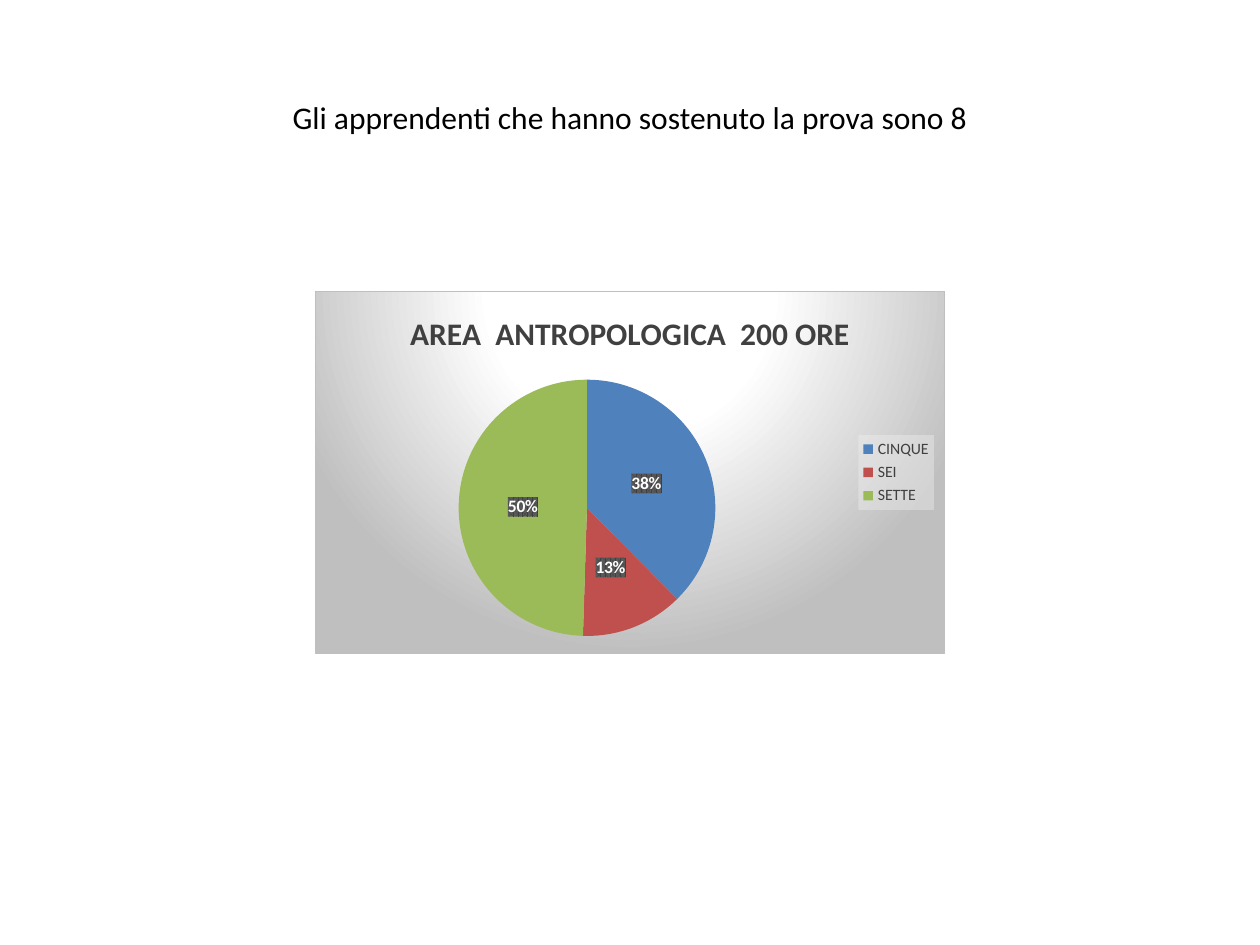
"""Build a slide that shows the marks of the learners as a pie chart."""
import dataclasses
import typing

import lxml.etree
import pptx
import pptx.chart.data
import pptx.dml.color
import pptx.enum.chart
import pptx.enum.text
import pptx.oxml.ns
import pptx.util

EMU_PER_PX = 914400 / 126
DRAWING_NS = pptx.oxml.ns.nsdecls("a", "c")


@dataclasses.dataclass(frozen=True)
class Theme:
    font: str = "Calibri"
    ink: str = "000000"
    muted: str = "404040"
    pale: str = "FFFFFF"
    edge: str = "BFBFBF"
    legend_back: str = "F2F2F2"
    label_back: str = "595959"
    heading_size: int = 18
    label_size: int = 10
    legend_size: int = 9


@dataclasses.dataclass(frozen=True)
class Box:
    left: int
    top: int
    width: int
    height: int

    def emu(self) -> list[int]:
        return [px(length) for length in dataclasses.astuple(self)]


@dataclasses.dataclass(frozen=True)
class Mark:
    name: str
    percent: int
    color: str


THEME = Theme()
HEADING = "Gli apprendenti che hanno sostenuto la prova sono 8"
HEADING_BOX = Box(63, 38, 1134, 157)
AREA_TITLE = "AREA  ANTROPOLOGICA  200 ORE"
AREA_BOX = Box(315, 291, 630, 363)
MARKS = [
    Mark("CINQUE", 38, "4F81BD"),
    Mark("SEI", 13, "C0504D"),
    Mark("SETTE", 50, "9BBB59"),
]
AREA_FILL = f"""<a:gradFill><a:gsLst>
<a:gs pos="0"><a:srgbClr val="{THEME.pale}"/></a:gs>
<a:gs pos="39000"><a:srgbClr val="{THEME.pale}"/></a:gs>
<a:gs pos="100000"><a:srgbClr val="{THEME.edge}"/></a:gs></a:gsLst>
<a:path path="circle"><a:fillToRect l="50000" t="-80000" r="50000" b="180000"/></a:path>
</a:gradFill><a:ln w="9525"><a:solidFill><a:srgbClr val="{THEME.edge}"/></a:solidFill></a:ln>"""
LEGEND_FILL = f"""<a:solidFill><a:srgbClr val="{THEME.legend_back}">
<a:alpha val="39000"/></a:srgbClr></a:solidFill><a:ln><a:noFill/></a:ln>"""
LABEL_FILL = f"""<a:pattFill prst="pct75"><a:fgClr><a:srgbClr val="{THEME.muted}"/></a:fgClr>
<a:bgClr><a:srgbClr val="{THEME.label_back}"/></a:bgClr></a:pattFill><a:ln><a:noFill/></a:ln>"""


def px(length: int) -> int:
    return round(length * EMU_PER_PX)


def apply(target: typing.Any, values: dict[str, typing.Any]) -> None:
    for attribute, value in values.items():
        setattr(target, attribute, value)


def style_font(font: typing.Any, size: int, color: str, bold: bool = False) -> None:
    apply(font, {"name": THEME.font, "size": pptx.util.Pt(size), "bold": bold})
    font.color.rgb = pptx.dml.color.RGBColor.from_string(color)


def add_format_before(successor: typing.Any, content: str) -> None:
    successor.addprevious(pptx.oxml.parse_xml(f"<c:spPr {DRAWING_NS}>{content}</c:spPr>"))


def add_heading(slide: typing.Any, box: Box, text: str) -> None:
    frame = slide.shapes.add_textbox(*box.emu()).text_frame
    apply(frame, {"word_wrap": True, "vertical_anchor": pptx.enum.text.MSO_ANCHOR.MIDDLE})
    sentence = frame.paragraphs[0]
    apply(sentence, {"text": text, "alignment": pptx.enum.text.PP_ALIGN.CENTER})
    style_font(sentence.runs[0].font, THEME.heading_size, THEME.ink)


def add_area_chart(slide: typing.Any, box: Box, title: str, marks: list[Mark]) -> None:
    results = pptx.chart.data.CategoryChartData()
    results.categories = [mark.name for mark in marks]
    results.add_series("Series 1", [mark.percent for mark in marks])
    area = slide.shapes.add_chart(
        pptx.enum.chart.XL_CHART_TYPE.PIE, *box.emu(), results
    ).chart
    apply(area, {"has_title": True, "has_legend": True})
    style_font(area.font, THEME.label_size, THEME.ink)
    add_format_before(area.font._element.getparent().getparent().getparent(), AREA_FILL)

    caption = area.chart_title.text_frame
    caption.text = title
    style_font(caption.paragraphs[0].runs[0].font, THEME.heading_size, THEME.muted, True)

    legend = area.legend
    apply(legend, {
        "position": pptx.enum.chart.XL_LEGEND_POSITION.RIGHT,
        "include_in_layout": False,
    })
    style_font(legend.font, THEME.legend_size, THEME.muted)
    add_format_before(legend._element.find(pptx.oxml.ns.qn("c:txPr")), LEGEND_FILL)

    plot = area.plots[0]
    plot.vary_by_categories = True
    series = plot.series[0]
    for index, mark in enumerate(marks):
        fill = series.points[index].format.fill
        fill.solid()
        fill.fore_color.rgb = pptx.dml.color.RGBColor.from_string(mark.color)

    shares = series.data_labels
    apply(shares, {
        "show_percentage": True,
        "show_value": False,
        "number_format": "0%",
        "number_format_is_linked": False,
        "position": pptx.enum.chart.XL_LABEL_POSITION.CENTER,
    })
    style_font(shares.font, THEME.label_size, THEME.pale, True)
    add_format_before(shares._element.find(pptx.oxml.ns.qn("c:txPr")), LABEL_FILL)


def main() -> None:
    deck = pptx.Presentation()
    apply(deck, {"slide_width": px(1260), "slide_height": px(945)})
    slide = deck.slides.add_slide(deck.slide_layouts[6])
    add_heading(slide, HEADING_BOX, HEADING)
    add_area_chart(slide, AREA_BOX, AREA_TITLE, MARKS)
    deck.save("out.pptx")


if __name__ == "__main__":
    main()
